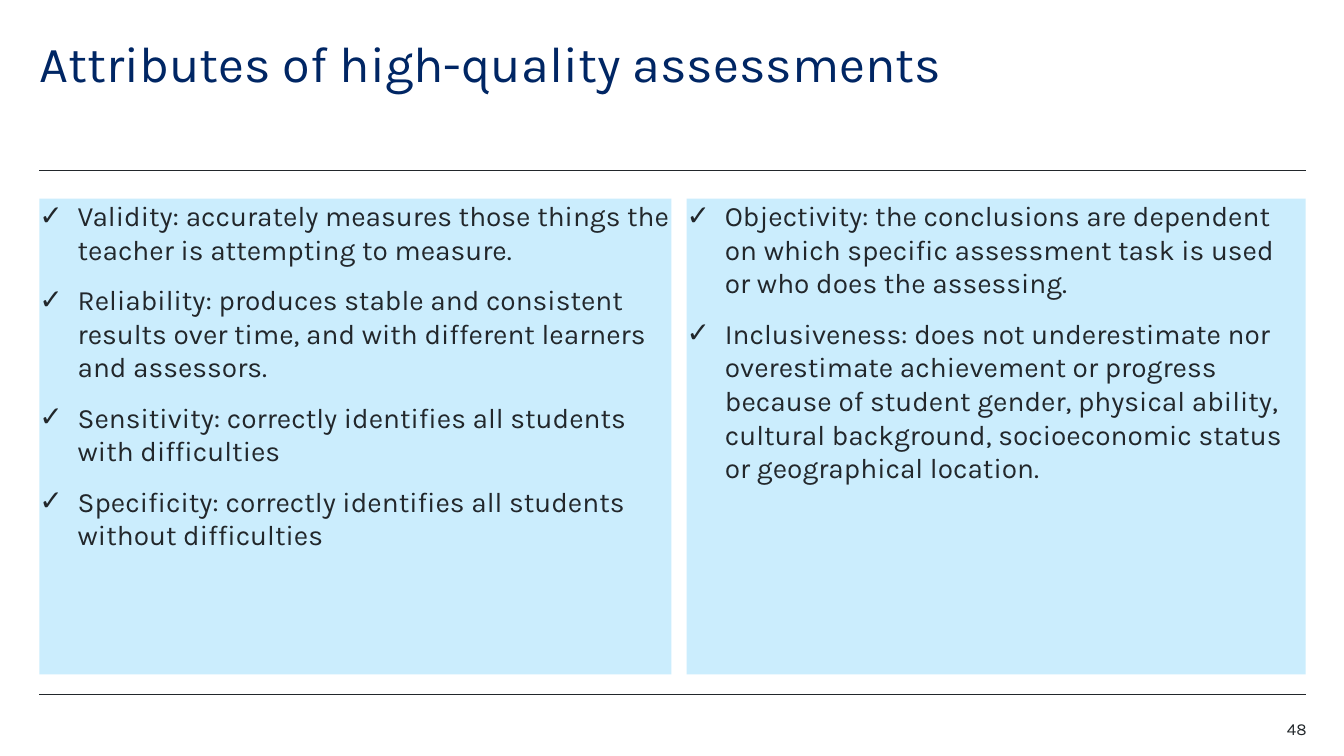
import pptx
import pptx.util
import pptx.dml.color
import pptx.enum.shapes
import pptx.enum.text
import pptx.oxml
from pptx.util import Inches

LEFT, RIGHT = 0.39, 12.95

VALIDITY_POINTS = [
    "Validity: accurately measures those things the teacher is attempting to measure.",
    "Reliability: produces stable and consistent results over time, and with different "
    "learners and assessors.",
    "Sensitivity: correctly identifies all students with difficulties",
    "Specificity: correctly identifies all students without difficulties",
]
FAIRNESS_POINTS = [
    "Objectivity: the conclusions are dependent on which specific assessment task is used "
    "or who does the assessing.",
    "Inclusiveness: does not underestimate nor overestimate achievement or progress because "
    "of student gender, physical ability, cultural background, socioeconomic status or "
    "geographical location.",
]


class Deck:
    """Holds the style and the current slide, and adds each kind of element."""

    FONT = "Karla"
    COLORS = {"title": "002664", "text": "22272B", "panel": "CBEDFD"}

    def __init__(self):
        self.prs = pptx.Presentation()
        self.prs.slide_width, self.prs.slide_height = Inches(13.33), Inches(7.5)
        self.s = self.prs.slides.add_slide(self.prs.slide_layouts[3])

    def color(self, name):
        return pptx.dml.color.RGBColor.from_string(self.COLORS[name])

    def place(self, sp, x, y, w, h):
        sp.left, sp.top, sp.width, sp.height = map(Inches, (x, y, w, h))
        tf = sp.text_frame
        tf.margin_left = tf.margin_top = tf.margin_right = tf.margin_bottom = 0
        tf.word_wrap = True
        tf.auto_size = pptx.enum.text.MSO_AUTO_SIZE.NONE
        tf.vertical_anchor = pptx.enum.text.MSO_ANCHOR.TOP
        return tf

    def add_text(self, p, text, size=20, color="text", align="LEFT", spacing=1.0,
                 after=0, bullet=None, indent=0.38):
        p.alignment = getattr(pptx.enum.text.PP_ALIGN, align)
        p.line_spacing = spacing
        p.space_before, p.space_after = pptx.util.Pt(0), pptx.util.Pt(after)
        if bullet:
            pPr = p._p.get_or_add_pPr()
            pPr.set("marL", str(Inches(indent)))
            pPr.set("indent", str(-Inches(indent)))
            bu = pptx.oxml.ns.qn("a:buChar")
            pPr.append(pPr.makeelement(bu, {"char": bullet}))
        r = p.add_run()
        r.text = text
        r.font.name = self.FONT
        r.font.size = pptx.util.Pt(size)
        r.font.color.rgb = self.color(color)

    def title(self, text):
        tf = self.place(self.s.shapes.title, LEFT, 0.39, 11.02, 1.1)
        self.add_text(tf.paragraphs[0], text, size=36, color="title", spacing=0.9)

    def panel(self, idx, x, w, points):
        sp = self.s.placeholders[idx]
        tf = self.place(sp, x, 1.97, w, 4.72)
        sp.fill.solid()
        sp.fill.fore_color.rgb = self.color("panel")
        for i, text in enumerate(points):
            p = tf.add_paragraph() if i else tf.paragraphs[0]
            self.add_text(p, text, after=12, bullet="✓")

    def rule(self, y):
        line = self.s.shapes.add_connector(
            pptx.enum.shapes.MSO_CONNECTOR.STRAIGHT,
            Inches(LEFT), Inches(y), Inches(RIGHT), Inches(y))
        line.line.color.rgb = self.color("text")
        line.line.width = pptx.util.Pt(0.5)
        spPr = line._element.spPr
        spPr.append(spPr.makeelement(pptx.oxml.ns.qn("a:effectLst"), {}))

    def page_number(self, text):
        sp = self.s.shapes.add_textbox(0, 0, 0, 0)
        tf = self.place(sp, 12.17, 7.13, 0.79, 0.2)
        self.add_text(tf.paragraphs[0], text, size=12, align="RIGHT")


def main():
    deck = Deck()
    for y in (1.69, 6.89):
        deck.rule(y)
    deck.title("Attributes of high-quality assessments")
    deck.panel(1, LEFT, 6.27, VALIDITY_POINTS)
    deck.panel(2, 6.81, 6.14, FAIRNESS_POINTS)
    deck.page_number("48")
    deck.prs.save("out.pptx")


if __name__ == "__main__":
    main()
